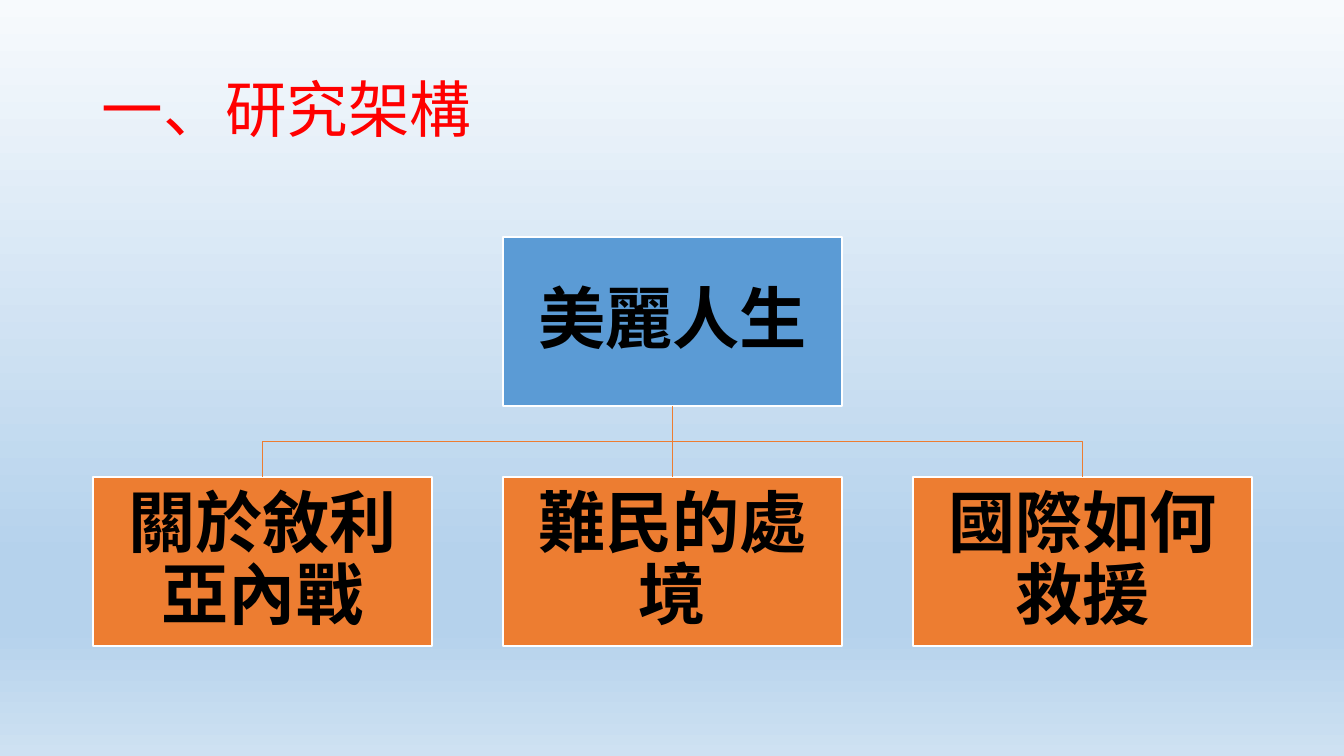
import copy
from dataclasses import dataclass

import pptx
import pptx.dml.color
import pptx.enum.shapes
import pptx.enum.text
import pptx.oxml
import pptx.oxml.ns
import pptx.util

PX = 914400 / 100.8  # EMU in one px


@dataclass(frozen=True)
class Theme:
    font: str = "Calibri"
    title_size: int = 44
    box_size: int = 48
    title: str = "FF0000"
    text: str = "000000"
    root: str = "5B9BD5"
    branch: str = "ED7D31"
    border: str = "FFFFFF"
    backdrop: tuple = ((0, "F7FAFD"), (0.74, "B5D2EC"),
                       (0.83, "B5D2EC"), (1, "CEE1F2"))


THEME = Theme()


def px(n):
    return pptx.util.Emu(round(n * PX))


def rgb(value):
    return pptx.dml.color.RGBColor.from_string(value)


def style_line(line, color):
    line.color.rgb = rgb(color)
    line.width = pptx.util.Pt(1)


def write(tf, text, size, color, bold=False, align=None):
    tf.word_wrap = True
    tf.vertical_anchor = pptx.enum.text.MSO_ANCHOR.MIDDLE
    p = tf.paragraphs[0]
    p.text = text
    p.alignment = align
    p.line_spacing = 0.9
    p.font.name = THEME.font
    p.font.size = pptx.util.Pt(size)
    p.font.bold = bold
    p.font.color.rgb = rgb(color)


def paint_background(s):
    fill = s.background.fill
    fill.gradient()
    fill.gradient_angle = 270
    stops = s.element.find(".//" + pptx.oxml.ns.qn("a:gsLst"))
    while len(stops) < len(THEME.backdrop):
        stops.append(copy.deepcopy(stops[0]))
    for stop, (position, color) in zip(fill.gradient_stops, THEME.backdrop):
        stop.position = position
        stop.color.rgb = rgb(color)


def add_title(s, text, x, y, w, h):
    sp = s.shapes.add_textbox(px(x), px(y), px(w), px(h))
    write(sp.text_frame, text, THEME.title_size, THEME.title)


def add_box(s, text, color, x, y, w, h):
    sp = s.shapes.add_shape(pptx.enum.shapes.MSO_SHAPE.RECTANGLE,
                            px(x), px(y), px(w), px(h))
    sp.shadow.inherit = False
    sp.fill.solid()
    sp.fill.fore_color.rgb = rgb(color)
    style_line(sp.line, THEME.border)
    tf = sp.text_frame
    tf.margin_left = tf.margin_right = tf.margin_top = tf.margin_bottom = px(3)
    write(tf, text, THEME.box_size, THEME.text, True,
          pptx.enum.text.PP_ALIGN.CENTER)
    return sp


def add_straight_link(s, parent, child):
    middle = parent.left + parent.width // 2
    c = s.shapes.add_connector(pptx.enum.shapes.MSO_CONNECTOR.STRAIGHT, middle,
                               parent.top + parent.height, middle, child.top)
    c.begin_connect(parent, 2)
    c.end_connect(child, 0)
    style_line(c.line, THEME.branch)
    c.element.spPr.append(pptx.oxml.parse_xml(
        "<a:effectLst %s/>" % pptx.oxml.ns.nsdecls("a")))


def add_bent_link(s, parent, child):
    x1, x2 = (b.left + b.width // 2 for b in (parent, child))
    y1, y2 = parent.top + parent.height, child.top
    bend = (y1 + y2) // 2
    builder = s.shapes.build_freeform(x1, y1)
    builder.add_line_segments([(x1, bend), (x2, bend), (x2, y2)], close=False)
    sp = builder.convert_to_shape()
    sp.shadow.inherit = False
    sp.fill.background()
    style_line(sp.line, THEME.branch)


def add_hierarchy(s, root_text, branch_texts, x, y, w, h):
    box_w, box_h = 339, 169
    step = (w - box_w) / (len(branch_texts) - 1)
    root = add_box(s, root_text, THEME.root,
                   x + (w - box_w) / 2, y, box_w, box_h)
    for i, text in enumerate(branch_texts):
        branch = add_box(s, text, THEME.branch,
                         x + i * step, y + h - box_h, box_w, box_h)
        is_middle = 2 * i == len(branch_texts) - 1
        link = add_straight_link if is_middle else add_bent_link
        link(s, root, branch)


def main():
    prs = pptx.Presentation()
    prs.slide_width, prs.slide_height = px(1344), px(756)
    s = prs.slides.add_slide(prs.slide_layouts[6])
    paint_background(s)
    # Heading
    add_title(s, "一、研究架構", 92, 40, 1159, 146)
    # Topic and its three branches
    add_hierarchy(s, "美麗人生",
                  ["關於敘利亞內戰", "難民的處境", "國際如何救援"],
                  93, 237, 1159, 409)
    prs.save("out.pptx")


if __name__ == "__main__":
    main()
